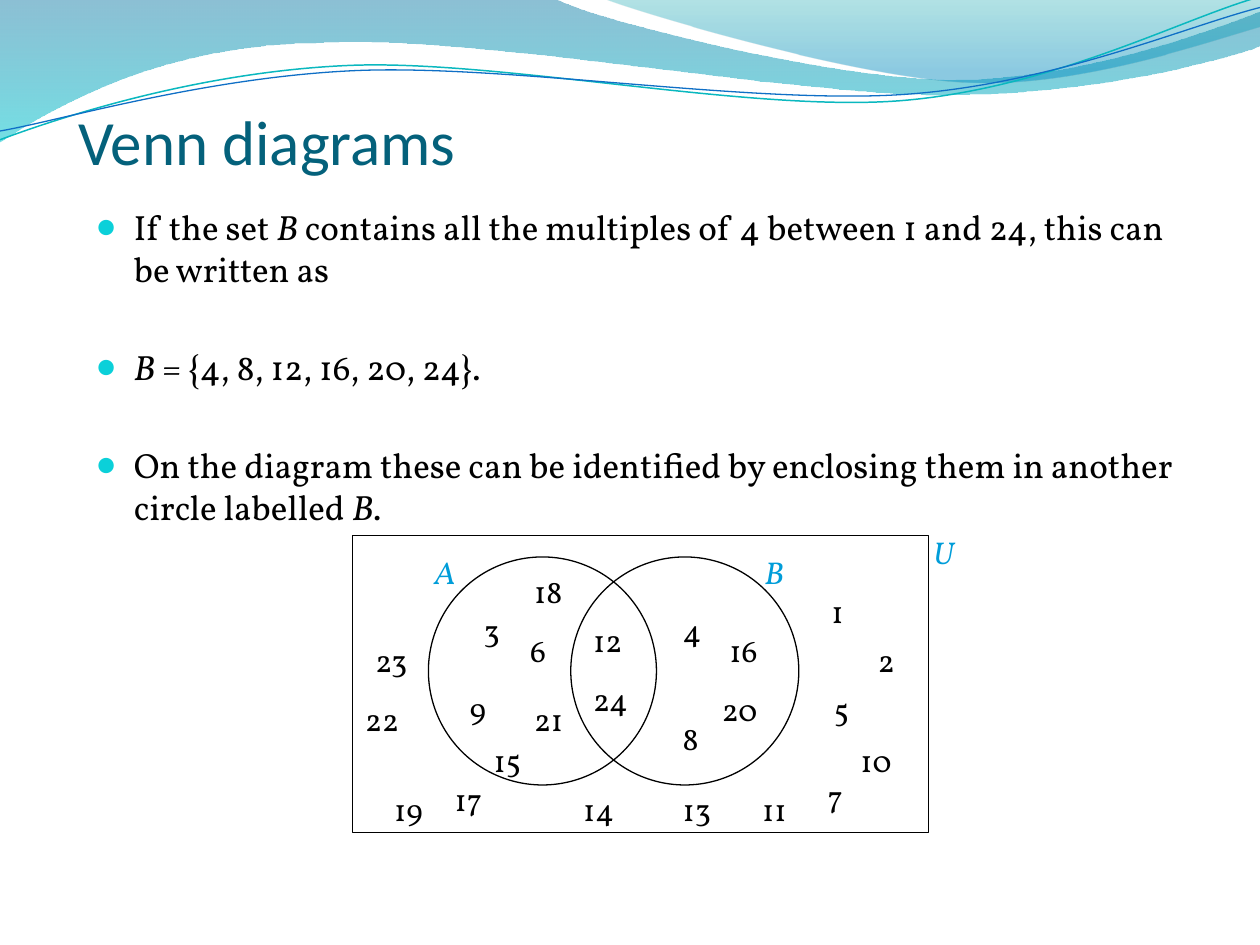
import math
import pptx
import pptx.util
import pptx.dml.color
import pptx.enum.shapes
import pptx.enum.text
import pptx.oxml.ns
import lxml.etree as etree

RGB = pptx.dml.color.RGBColor
BLACK, WHITE = RGB(0, 0, 0), RGB(255, 255, 255)
NAVY, BLUE, AQUA = RGB(0x04, 0x61, 0x7B), RGB(0x00, 0x9D, 0xD9), RGB(0x0B, 0xD0, 0xD9)
TEAL, ROYAL = RGB(0x0A, 0xB8, 0xBF), RGB(0x0F, 0x6F, 0xC6)
DEEP, CYAN = RGB(0x00, 0x74, 0xA1), RGB(0x00, 0xC6, 0xCF)
GREEN, SKY = RGB(0x00, 0xA1, 0xA9), RGB(0x00, 0x8B, 0xBF)

Pt = pptx.util.Pt
KIND = pptx.enum.shapes.MSO_SHAPE
ANCHOR = pptx.enum.text.MSO_ANCHOR
FIT = pptx.enum.text.MSO_AUTO_SIZE
qn = pptx.oxml.ns.qn

# The slide is a grid of 100 columns by 75 rows
CELL = pptx.util.Inches(0.1)
deck = pptx.Presentation()
deck.slide_width, deck.slide_height = 100 * CELL, 75 * CELL
slide = deck.slides.add_slide(deck.slide_layouts[6])
shapes = slide.shapes


def trace(start, parts, close):
    """Outline in cells: a part of one point is a line, of three a curve."""
    pen = shapes.build_freeform(start[0] * 100, start[1] * 100, scale=CELL / 100)
    pen.add_line_segments([(x * 100, y * 100) for part in parts for x, y in part],
                          close=close)
    shape = pen.convert_to_shape()
    shape.shadow.inherit = False
    steps = iter(list(shape._element.spPr.iter(qn("a:lnTo"))))
    for part in parts:
        first, *rest = [next(steps) for _ in part]
        if rest:
            curve = etree.Element(qn("a:cubicBezTo"))
            first.addprevious(curve)
            for step in (first, *rest):
                curve.append(step[0])
                step.getparent().remove(step)
    return shape


def write(area, paras, font, frame):
    """Text box in cells; every paragraph is a list of (text, italic)."""
    box = shapes.add_textbox(*(int(n * CELL) for n in area))
    text = box.text_frame
    for name, value in frame.items():
        setattr(text, name, value)
    for i, runs in enumerate(paras):
        para = text.add_paragraph() if i else text.paragraphs[0]
        for words, slant in runs:
            run = para.add_run()
            run.text = words
            for name, value in font.items():
                if name == "color":
                    run.font.color.rgb = value
                else:
                    setattr(run.font, name, value)
            run.font.italic = slant
    return text


# Header bands: start, outline, (position, colour, opacity) of both stops
bands = [
    ((0, -0.1),
     [[(44, -0.1)], [(47.6, 1.7), (66.4, 6.3), (75.8, 6.3)],
      [(85.3, 6.3), (95.8, 2.6), (100, 0.9)], [(100.1, 3.6)],
      [(98.3, 4.4), (87, 7.6), (74.6, 7.5)], [(62.2, 7.5), (38.2, 2.8), (25.7, 3.4)],
      [(12.9, 3.5), (4.6, 8.3), (-0.1, 11.3)]],
     [(0, DEEP, 45), (1, CYAN, 55)]),
    ((47.9, -0.1),
     [[(50.9, 1.1), (68.2, 6.2), (76.9, 6.5)], [(85.6, 6.9), (96.1, 3.2), (100, 2.1)],
      [(100, 0)]],
     [(0, GREEN, 30), (0.8, SKY, 45)]),
]
for start, parts, stops in bands:
    band = trace(start, parts, True)
    band.line.fill.background()
    band.fill.gradient()
    band.fill.gradient_angle = 270
    for stop, (place, color, _) in zip(band.fill.gradient_stops, stops):
        stop.position = place
        stop.color.rgb = color
    for node, (_, _, alpha) in zip(band._element.spPr.iter(qn("a:srgbClr")), stops):
        etree.SubElement(node, qn("a:alpha"), val=str(alpha * 1000))

# Header lines: laid level about their middle, then tilted
TILT = 2.7
cos, sin = math.cos(math.radians(TILT)), math.sin(math.radians(TILT))
lines = [
    ((0, 11.1), [[(4.8, 9.3), (15.8, 5.7), (27.7, 5.2)], [(39.5, 4.7), (59.3, 8.9), (71.3, 8)],
                 [(83.3, 7.1), (93.8, 1.5), (99.8, -0.2)]], (49.9, 5.75), TEAL, 0.85),
    ((0, 10.4), [[(4.7, 9.6), (16.4, 6.1), (28.3, 5.6)], [(40.3, 5.1), (59.7, 8.3), (71.7, 7.5)],
                 [(83.6, 6.7), (94.1, 2.1), (100, 0.6)]], (49.95, 5.9), ROYAL, 0.75),
]
for start, parts, (mx, my), color, width in lines:
    level = [[(mx + (x - mx) * cos - (y - my) * sin, my + (x - mx) * sin + (y - my) * cos)
              for x, y in part] for part in [[start], *parts]]
    line = trace(level[0][0], level[1:], False)
    line.rotation = -TILT
    line.fill.background()
    line.line.color.rgb = color
    line.line.width = Pt(width)

# Title
write((6.2, 1.65, 79.2, 12.5), [[("Venn diagrams", False)]],
      {"name": "Calibri", "size": Pt(36), "color": NAVY},
      {"word_wrap": True, "vertical_anchor": ANCHOR.BOTTOM,
       "margin_left": 0, "margin_right": 0, "margin_bottom": 0})

# Bulleted text
body = write((6.65, 15.8, 87.5, 42.9), [
    [("If the set ", False), ("B", True),
     (" contains all the multiples of 4 between 1 and 24, this can be written as", False)],
    [("B", True), (" = {4, 8, 12, 16, 20, 24}.", False)],
    [("On the diagram these can be identified by enclosing them in another circle labelled ",
      False), ("B", True), (".", False)],
], {"name": "Vollkorn", "size": Pt(20), "color": BLACK}, {"word_wrap": True})
for i, para in enumerate(body.paragraphs):
    para.space_before = Pt(32 if i else 0)
    props = para._p.get_or_add_pPr()
    props.set("marL", str(3 * CELL))
    props.set("indent", str(-3 * CELL))
    tint = etree.SubElement(props, qn("a:buClr"))
    etree.SubElement(tint, qn("a:srgbClr"), val=str(AQUA))
    etree.SubElement(props, qn("a:buSzPct"), val="95000")
    etree.SubElement(props, qn("a:buFont"), typeface="Calibri")
    etree.SubElement(props, qn("a:buChar"), char="●")

# Universal set and the two circles
for kind, area in [(KIND.RECTANGLE, (28, 42.5, 45.7, 23.6)),
                   (KIND.OVAL, (34, 44.2, 18.1, 18.1)),
                   (KIND.OVAL, (45.3, 44.2, 18.1, 18.1))]:
    shape = shapes.add_shape(kind, *(int(n * CELL) for n in area))
    shape.shadow.inherit = False
    shape.line.color.rgb = BLACK
    shape.line.width = Pt(0.75)
    if kind == KIND.RECTANGLE:
        shape.fill.solid()
        shape.fill.fore_color.rgb = WHITE
    else:
        shape.fill.background()

# Numbers by region: left and top of each
inner = {  # only A, both, only B
    3: (37.4, 48), 6: (41.1, 49.6), 9: (36.3, 54.2),
    15: (38.2, 58.3), 18: (41.4, 44.9), 21: (41.4, 55.1),
    12: (46.1, 48.8), 24: (46.1, 53.5),
    4: (53.2, 48), 8: (53.2, 56.6), 16: (56.9, 49.6), 20: (56.3, 54.3),
}
outer = {
    1: (65, 46.5), 2: (68.7, 50.4), 5: (65.2, 54.3), 7: (64.7, 61.2),
    10: (67.3, 58.3), 11: (59.5, 62.2), 13: (53.2, 62.2), 14: (45.3, 62.2),
    17: (35.1, 61.4), 19: (30.3, 62.2), 22: (28, 55.1), 23: (28.8, 50.4),
}
small = {"name": "Vollkorn", "size": Pt(18), "color": BLACK}
for spots in (inner, outer):
    for num, (left, top) in spots.items():
        wide = num > 9 and spots is outer
        width = 5.5 if wide else 4.8 if num > 9 else 3.4
        write((left, top, width, 4), [[(str(num), False)]], small,
              {"word_wrap": wide, "auto_size": FIT.SHAPE_TO_FIT_TEXT})

# Set names
for name, left, top, width in [("U", 73.1, 41.8, 3.8), ("A", 33.5, 43.4, 3.7),
                               ("B", 59.7, 43.4, 3.7)]:
    write((left, top, width, 4), [[(name, True)]], {**small, "color": BLUE},
          {"word_wrap": False, "auto_size": FIT.SHAPE_TO_FIT_TEXT})

deck.save("out.pptx")
